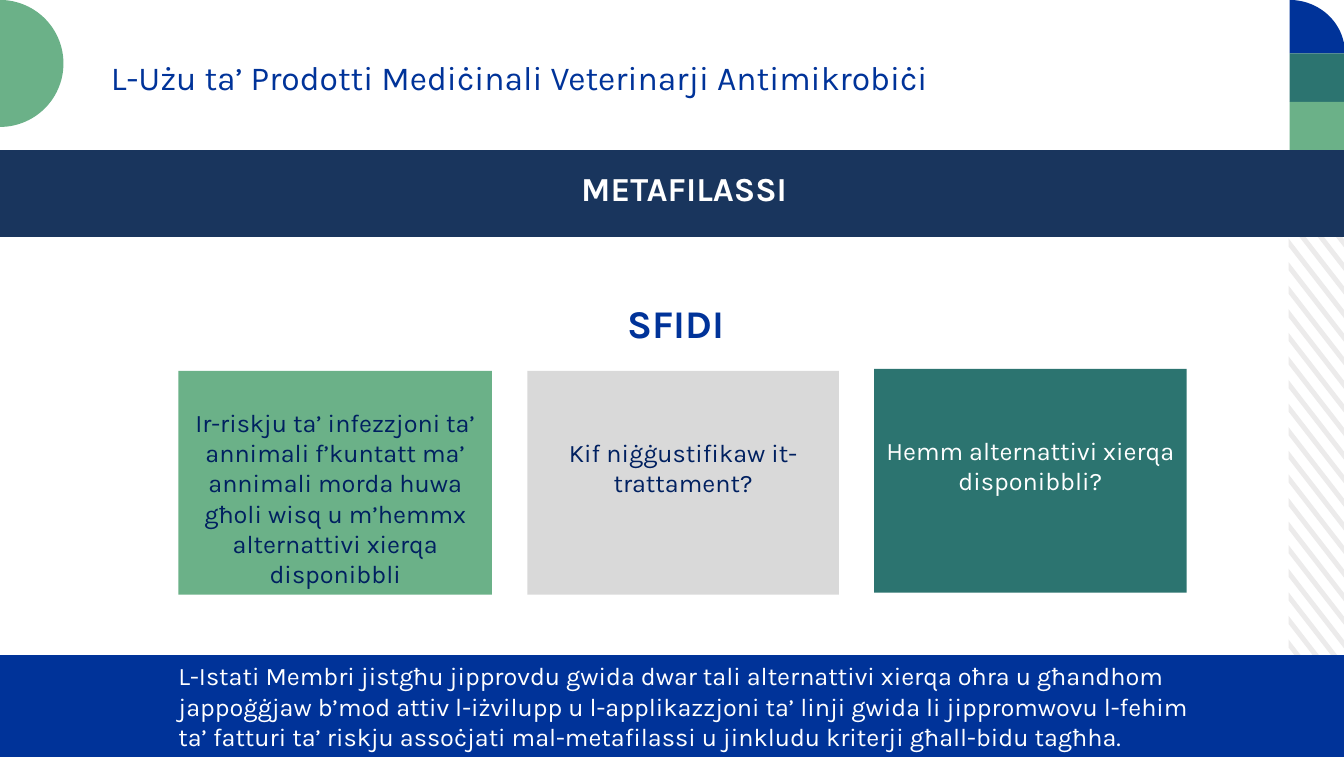
import math
from pptx import Presentation, util as u
from pptx.dml.color import RGBColor
from pptx.enum import shapes, text

WIDTH, HEIGHT = 13.33, 7.51
GREEN, TEAL, BLUE, NAVY, WHITE = "6BB188", "2C7470", "003399", "002060", "FFFFFF"


def paint(target, colour):
    """Fill a shape, without line or shadow, or colour a font."""
    if hasattr(target, "fill") and hasattr(target, "line"):
        target.fill.solid()
        target.fill.fore_color.rgb = RGBColor.from_string(colour)
        target.line.fill.background()
        target.shadow.inherit = False
    else:
        target.color.rgb = RGBColor.from_string(colour)


def write(shape, lines, colour, size=18, bold=False, align="CENTER", anchor="TOP", **margins):
    frame = shape.text_frame
    settings = {"word_wrap": True, "auto_size": text.MSO_AUTO_SIZE.NONE,
                "vertical_anchor": getattr(text.MSO_ANCHOR, anchor),
                "margin_left": u.Inches(0.1), "margin_right": u.Inches(0.1),
                "margin_top": u.Inches(0.05), "margin_bottom": u.Inches(0.05)}
    settings.update({name: u.Inches(value) for name, value in margins.items()})
    for name, value in settings.items():
        setattr(frame, name, value)
    frame.text = "\n".join(lines)
    for paragraph in frame.paragraphs:
        paragraph.alignment = getattr(text.PP_ALIGN, align)
        for run in paragraph.runs:
            for name, value in {"name": "Karla", "size": u.Pt(size), "bold": bold}.items():
                setattr(run.font, name, value)
            paint(run.font, colour)


presentation = Presentation()
presentation.slide_width, presentation.slide_height = u.Inches(WIDTH), u.Inches(HEIGHT)
slide = presentation.slides.add_slide(presentation.slide_layouts[5])

# Diagonal stripes, clipped to the strip on the right
strip_left, strip_top, rise, pitch, thickness = 12.78, 1.54, 0.71, 0.234, 0.08
slope = rise / (WIDTH - strip_left)
stripes = []
for row in range(28):
    edges = []
    for y in (7.28 - row * pitch, 7.28 - row * pitch + thickness):
        ends = [min(max(end, strip_top), HEIGHT) for end in (y, y + rise)]
        edges.append([(strip_left + (end - y) / slope, end) for end in ends])
    stripes.append(edges[0] + edges[1][::-1])

# Round corner pieces
turns = [math.radians(degree) for degree in range(-90, 91, 3)]
half_disc = [(0.63 * math.cos(turn), 0.63 + 0.63 * math.sin(turn)) for turn in turns]
quarter = [(12.79 + 0.55 * math.cos(turn), 0.53 + 0.53 * math.sin(turn))
           for turn in turns if turn <= 0] + [(12.79, 0.53)]

for outlines, colour in ((stripes, "ECEBEB"), ([quarter], BLUE), ([half_disc], GREEN)):
    builder = None
    for outline in outlines:
        points = [(u.Inches(x), u.Inches(y)) for x, y in outline]
        if builder is None:
            builder = slide.shapes.build_freeform(*points[0], scale=1.0)
        else:
            builder.move_to(*points[0])
        builder.add_line_segments(points[1:], close=True)
    paint(builder.convert_to_shape(), colour)

# Colour blocks, bands and challenge cards
footer = [
    "L-Istati Membri jistgħu jipprovdu gwida dwar tali alternattivi xierqa oħra u għandhom",
    "jappoġġjaw b’mod attiv l-iżvilupp u l-applikazzjoni ta’ linji gwida li jippromwovu l-fehim",
    "ta’ fatturi ta’ riskju assoċjati mal-metafilassi u jinkludu kriterji għall-bidu tagħha.",
]
risk = ("Ir-riskju ta’ infezzjoni ta’ annimali f’kuntatt ma’ annimali morda huwa "
        "għoli wisq u m’hemmx alternattivi xierqa disponibbli")
blocks = [
    ((12.79, 0.53, 0.55, 0.48), TEAL, None),
    ((12.79, 1.01, 0.55, 0.53), GREEN, None),
    ((0, 1.49, WIDTH, 0.86), "19355D", None),
    ((1.77, 3.68, 3.11, 2.22), GREEN,
     {"lines": [risk], "colour": NAVY, "margin_top": 0.36}),
    ((5.23, 3.68, 3.09, 2.22), "D9D9D9",
     {"lines": ["Kif niġġustifikaw it-trattament?"], "colour": NAVY, "margin_top": 0.66}),
    ((8.67, 3.66, 3.1, 2.22), TEAL,
     {"lines": ["Hemm alternattivi xierqa disponibbli?"], "colour": WHITE, "margin_top": 0.66}),
    ((0, 6.5, WIDTH, 1.01), BLUE,
     {"lines": footer, "colour": WHITE, "align": "LEFT", "anchor": "MIDDLE",
      "margin_left": 1.77}),
]
for box, colour, content in blocks:
    block = slide.shapes.add_shape(shapes.MSO_SHAPE.RECTANGLE, *map(u.Inches, box))
    paint(block, colour)
    if content:
        write(block, **content)

# Headings
for box, heading, colour, size in (
    ((0.53, 1.62, 12.51, 0.5), "METAFILASSI", WHITE, 24),
    ((3.37, 2.92, 6.67, 0.57), "SFIDI", BLUE, 28),
):
    write(slide.shapes.add_textbox(*map(u.Inches, box)), [heading], colour, size, bold=True)

# Title
title = slide.shapes.title
for name, value in {"left": 1, "top": 0.51, "width": 8.76, "height": 0.58}.items():
    setattr(title, name, u.Inches(value))
write(title, ["L-Użu ta’ Prodotti Mediċinali Veterinarji Antimikrobiċi"], BLUE, 24, align="LEFT")

presentation.save("out.pptx")
